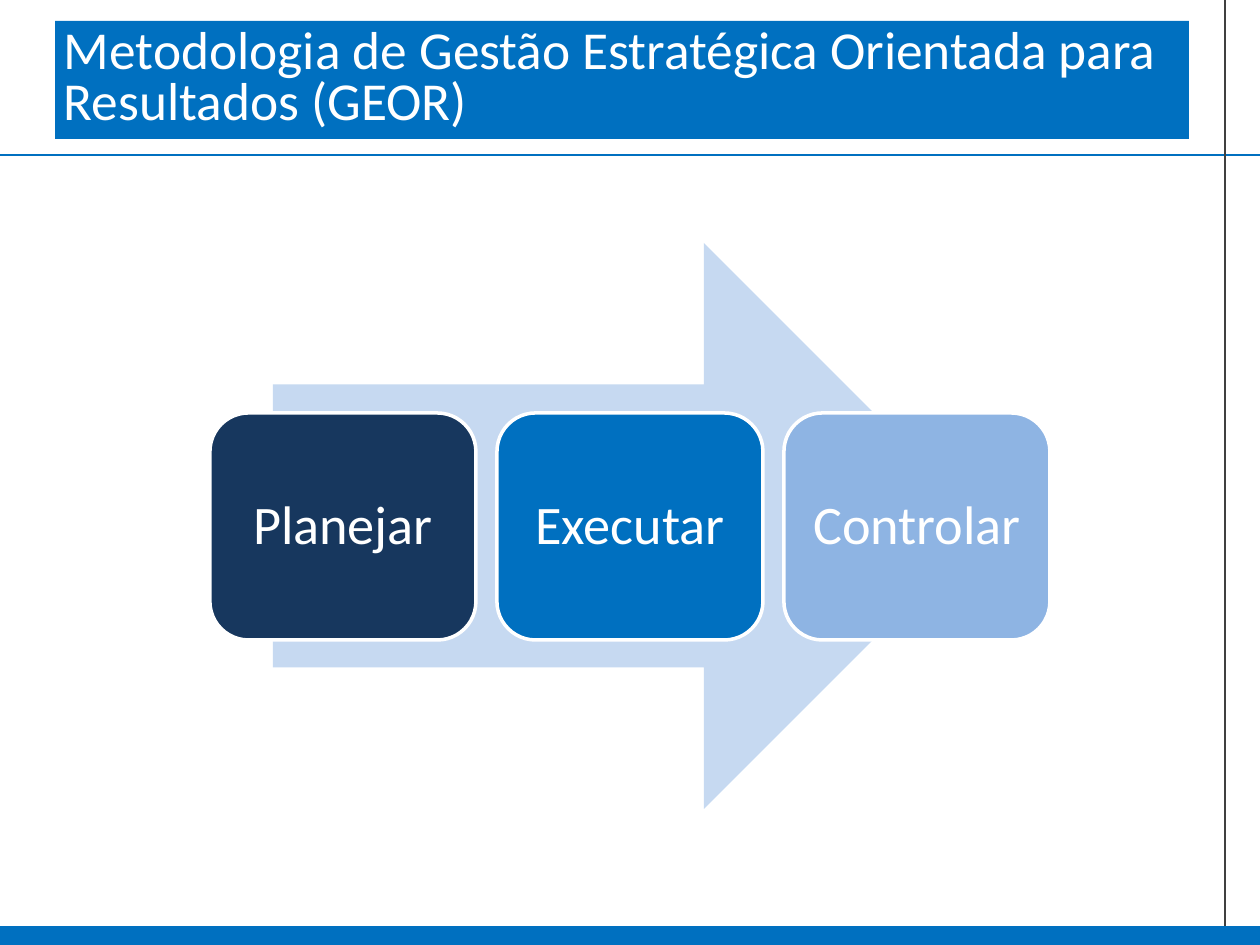
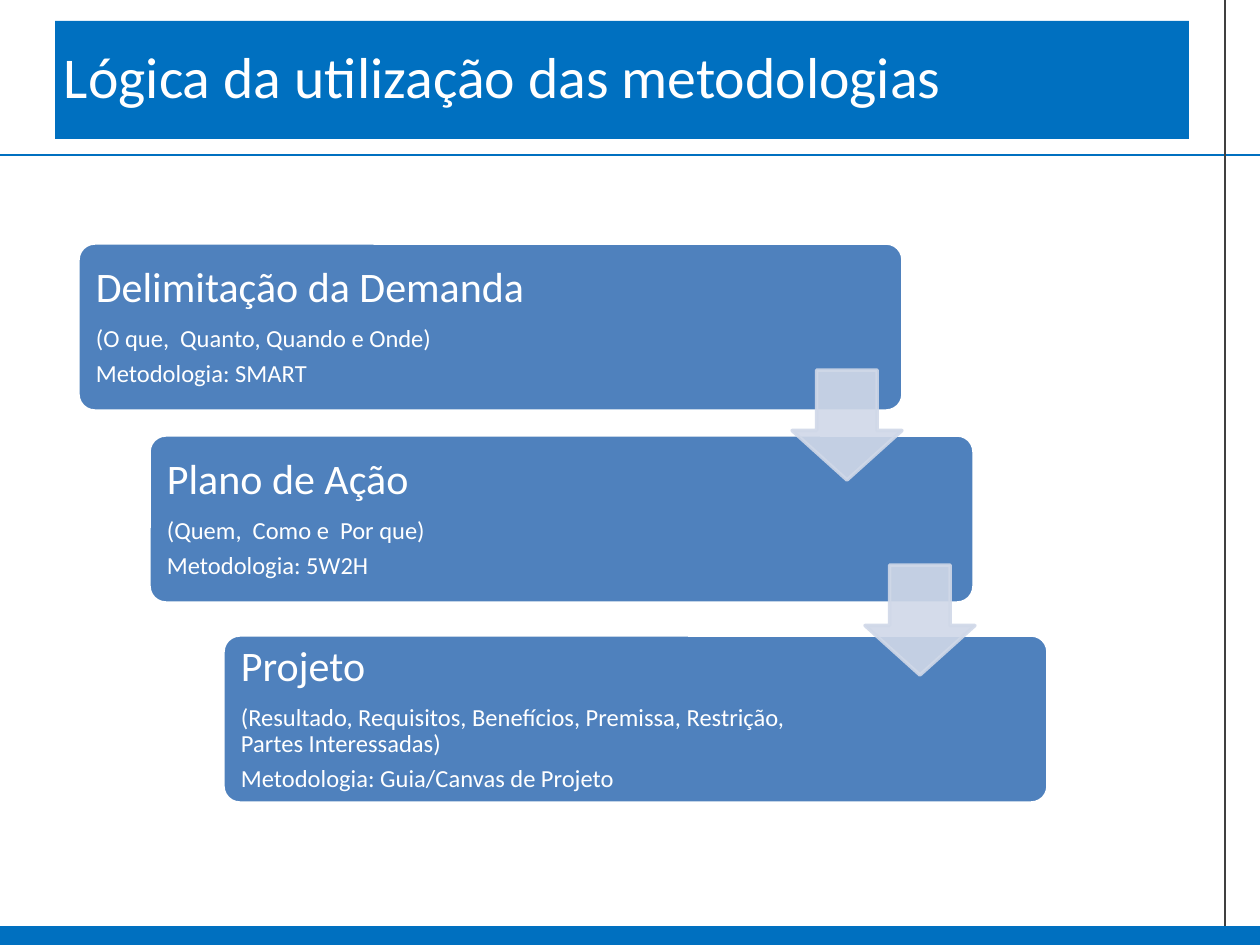
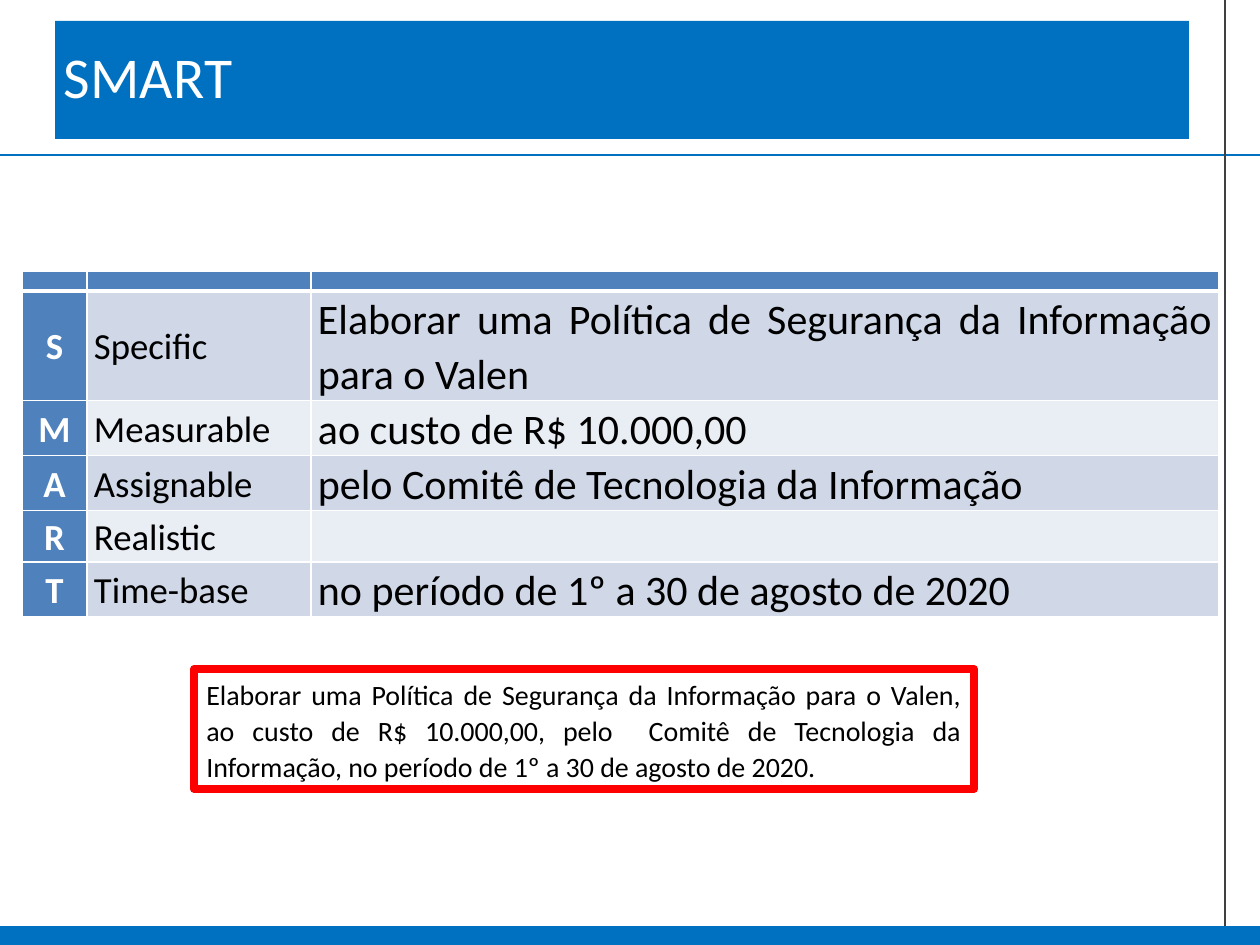
from dataclasses import dataclass

from lxml import etree
from pptx import Presentation
from pptx import util as u
from pptx.dml.color import RGBColor
from pptx.enum import shapes, text
from pptx.oxml import ns

PX_PER_INCH = 126
FONT = "Calibri"
BLUE, NAVY, SKY, PALE = "0070C0", "17375E", "8EB4E3", "C6D9F1"
STEEL, BAND_DARK, BAND_LIGHT = "4F81BD", "D0D8E8", "E9EDF4"
WHITE, BLACK, RED, GREY = "FFFFFF", "000000", "FF0000", "404040"
LEFT, CENTER, JUSTIFY = text.PP_ALIGN.LEFT, text.PP_ALIGN.CENTER, text.PP_ALIGN.JUSTIFY
KIND = shapes.MSO_SHAPE


@dataclass(frozen=True)
class Box:
    left: int
    top: int
    width: int
    height: int

    def emu(self) -> list[int]:
        return [px(n) for n in (self.left, self.top, self.width, self.height)]


@dataclass(frozen=True)
class Line:
    """One paragraph with its formatting."""
    words: str
    size: float
    color: str = WHITE
    align: int = LEFT
    spacing: float = 0.9
    bold: bool = False


@dataclass(frozen=True)
class Phase:
    name: str
    fill: str


@dataclass(frozen=True)
class Step:
    left: int
    top: int
    heading: str
    details: tuple[str, ...]


@dataclass(frozen=True)
class Criterion:
    letter: str
    name: str
    answer: str
    height: int


PHASES = [Phase("Planejar", NAVY), Phase("Executar", BLUE), Phase("Controlar", SKY)]
STEPS = [
    Step(78, 243, "Delimitação da Demanda",
         ("(O que,  Quanto, Quando e Onde)", "Metodologia: SMART")),
    Step(149, 435, "Plano de Ação",
         ("(Quem,  Como e  Por que)", "Metodologia: 5W2H")),
    Step(223, 635, "Projeto",
         ("(Resultado, Requisitos, Benefícios, Premissa, Restrição, Partes Interessadas)",
          "Metodologia: Guia/Canvas de Projeto")),
]
STEP_ARROWS = [(792, 370), (865, 565)]
CRITERIA = [
    Criterion("S", "Specific",
              "Elaborar uma Política de Segurança da Informação para o Valen", 108),
    Criterion("M", "Measurable", "ao custo de R$ 10.000,00", 55),
    Criterion("A", "Assignable", "pelo Comitê de Tecnologia da Informação", 55),
    Criterion("R", "Realistic", "", 47),
    Criterion("T", "Time-base", "no período de 1º a 30 de agosto de 2020", 55),
]
SUMMARY = ("Elaborar uma Política de Segurança da Informação para o Valen, "
           "ao custo de R$ 10.000,00, pelo  Comitê de Tecnologia da Informação, "
           "no período de 1º a 30 de agosto de 2020.")


def px(length: int) -> int:
    return round(length * u.Inches(1) / PX_PER_INCH)


def rgb(color: str) -> RGBColor:
    return RGBColor.from_string(color)


def paint(target, color: str) -> None:
    target.fill.solid()
    target.fill.fore_color.rgb = rgb(color)


def outline(target, color: str, points: float) -> None:
    target.line.color.rgb = rgb(color)
    target.line.width = u.Pt(points)


def set_margins(frame, left: int, top: int, right: int, bottom: int) -> None:
    frame.margin_left, frame.margin_top = px(left), px(top)
    frame.margin_right, frame.margin_bottom = px(right), px(bottom)


def write(frame, lines: list[Line]) -> None:
    """Fill a text frame, with a gap of 35% of the text size between paragraphs."""
    frame.text = "\n".join(line.words for line in lines)
    for paragraph, line in zip(frame.paragraphs, lines):
        paragraph.alignment = line.align
        paragraph.line_spacing = line.spacing
        paragraph.space_before = u.Pt(0)
        paragraph.space_after = u.Pt(0 if line is lines[-1] else round(line.size * 0.35, 1))
        for run in paragraph.runs:
            run.font.name, run.font.size = FONT, u.Pt(line.size)
            run.font.bold = line.bold
            run.font.color.rgb = rgb(line.color)


def add_block(slide, kind, box: Box, fill: str, border: str = ""):
    block = slide.shapes.add_shape(kind, *box.emu())
    block.shadow.inherit = False
    paint(block, fill)
    if border:
        outline(block, border, 2)
    else:
        block.line.fill.background()
    return block


def add_rule(slide, start: tuple[int, int], end: tuple[int, int], color: str) -> None:
    ends = [px(n) for n in start + end]
    rule = slide.shapes.add_connector(shapes.MSO_CONNECTOR.STRAIGHT, *ends)
    outline(rule, color, 0.75)
    etree.SubElement(rule.element.spPr, ns.qn("a:effectLst"))


def new_slide(deck, heading: str, size: float = 33, spacing: float = 0.9):
    """Add a slide with the shared rules, footer band and title band."""
    slide = deck.slides.add_slide(deck.slide_layouts[5])
    add_rule(slide, (0, 155), (1260, 155), BLUE)
    add_rule(slide, (1225, 0), (1225, 945), GREY)
    add_block(slide, KIND.RECTANGLE, Box(0, 928, 1260, 17), BLUE, BLUE)
    title = slide.shapes.title
    title.left, title.top, title.width, title.height = Box(55, 21, 1134, 118).emu()
    paint(title, BLUE)
    frame = title.text_frame
    frame.auto_size = text.MSO_AUTO_SIZE.NONE
    frame.vertical_anchor = text.MSO_ANCHOR.MIDDLE
    set_margins(frame, 9, 5, 9, 5)
    write(frame, [Line(heading, size, spacing=spacing)])
    return slide


def add_text_block(slide, box: Box, fill: str, lines: list[Line], margin: int,
                   right: int, corner: float) -> None:
    block = add_block(slide, KIND.ROUNDED_RECTANGLE, box, fill, WHITE)
    block.adjustments[0] = corner
    frame = block.text_frame
    frame.word_wrap = True
    frame.vertical_anchor = text.MSO_ANCHOR.MIDDLE
    set_margins(frame, margin, margin, right, margin)
    write(frame, lines)


def make_translucent(block, percent: int) -> None:
    for color in block.element.spPr.iter(ns.qn("a:srgbClr")):
        etree.SubElement(color, ns.qn("a:alpha"), val=str(percent * 1000))


def format_cell(cell, fill: str, line: Line, bottom_border: float = 1) -> None:
    cell.margin_left = cell.margin_right = px(7)
    cell.margin_top = cell.margin_bottom = 0
    cell.vertical_anchor = text.MSO_ANCHOR.MIDDLE
    write(cell.text_frame, [line])
    if not line.words:
        etree.SubElement(cell.text_frame.paragraphs[0]._p, ns.qn("a:endParaRPr"),
                         sz=str(line.size * 100))
    for side in "LRTB":
        points = bottom_border if side == "B" else 1
        edge = etree.SubElement(cell._tc.get_or_add_tcPr(), ns.qn(f"a:ln{side}"),
                                w=str(u.Pt(points)))
        solid = etree.SubElement(edge, ns.qn("a:solidFill"))
        etree.SubElement(solid, ns.qn("a:srgbClr"), val=WHITE)
    paint(cell, fill)


def build_cycle(deck) -> None:
    slide = new_slide(deck, "Metodologia de Gestão Estratégica Orientada para Resultados (GEOR)",
                      30.5, 0.8)
    add_block(slide, KIND.RIGHT_ARROW, Box(273, 243, 714, 566), PALE)
    for index, phase in enumerate(PHASES):
        add_text_block(slide, Box(210 + 287 * index, 413, 266, 227), phase.fill,
                       [Line(phase.name, 31, align=CENTER)], 16, 16, 0.17)


def build_steps(deck) -> None:
    slide = new_slide(deck, "Lógica da utilização das metodologias")
    for step in STEPS:
        lines = [Line(step.heading, 24)] + [Line(detail, 14) for detail in step.details]
        add_text_block(slide, Box(step.left, step.top, 825, 168), STEEL, lines, 13, 194, 0.1)
    for left, top in STEP_ARROWS:
        arrow = add_block(slide, KIND.DOWN_ARROW, Box(left, top, 110, 110), BAND_DARK, BAND_DARK)
        arrow.adjustments[0], arrow.adjustments[1] = 0.55, 0.45
        make_translucent(arrow, 90)


def build_smart(deck) -> None:
    slide = new_slide(deck, "SMART")
    widths = (65, 224, 908)
    heights = [20] + [criterion.height for criterion in CRITERIA]
    box = Box(22, 271, sum(widths), sum(heights))
    table = slide.shapes.add_table(len(heights), len(widths), *box.emu()).table
    for column, width in zip(table.columns, widths):
        column.width = px(width)
    for row, height in zip(table.rows, heights):
        row.height = px(height)
    for cell in table.rows[0].cells:
        format_cell(cell, STEEL, Line("", 8), bottom_border=3)
    for index, criterion in enumerate(CRITERIA):
        band = BAND_LIGHT if index % 2 else BAND_DARK
        letter, name, answer = table.rows[index + 1].cells
        format_cell(letter, STEEL, Line(criterion.letter, 21, WHITE, CENTER, 1.07, True))
        format_cell(name, band, Line(criterion.name, 21, BLACK, JUSTIFY, 1.07))
        format_cell(answer, band, Line(criterion.answer, 24, BLACK, JUSTIFY, 1.07))

    summary = slide.shapes.add_textbox(*Box(194, 669, 780, 120).emu())
    outline(summary, RED, 4.5)
    summary.text_frame.word_wrap = True
    summary.text_frame.auto_size = text.MSO_AUTO_SIZE.SHAPE_TO_FIT_TEXT
    write(summary.text_frame, [Line(SUMMARY, 16, BLACK, JUSTIFY, 1.07)])


def main() -> None:
    deck = Presentation()
    deck.slide_width, deck.slide_height = px(1260), px(945)
    build_cycle(deck)
    build_steps(deck)
    build_smart(deck)
    deck.save("out.pptx")


if __name__ == "__main__":
    main()
